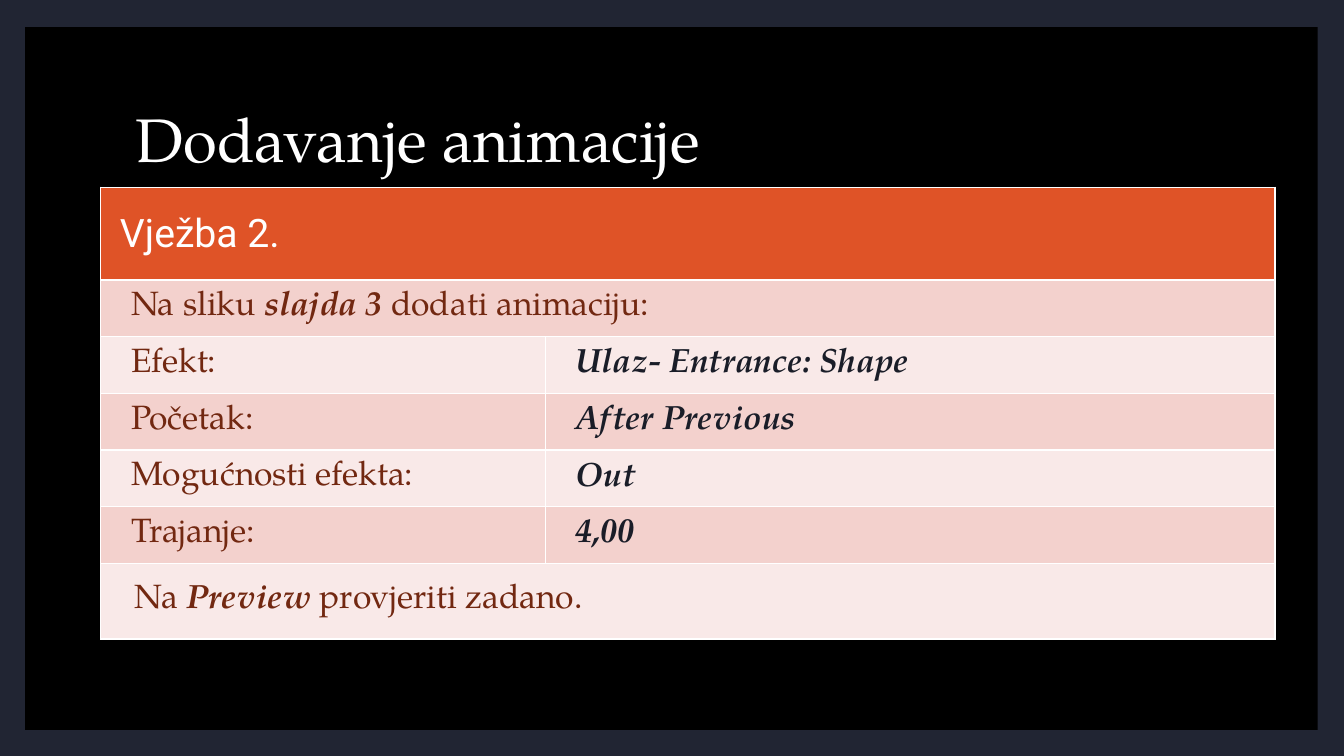
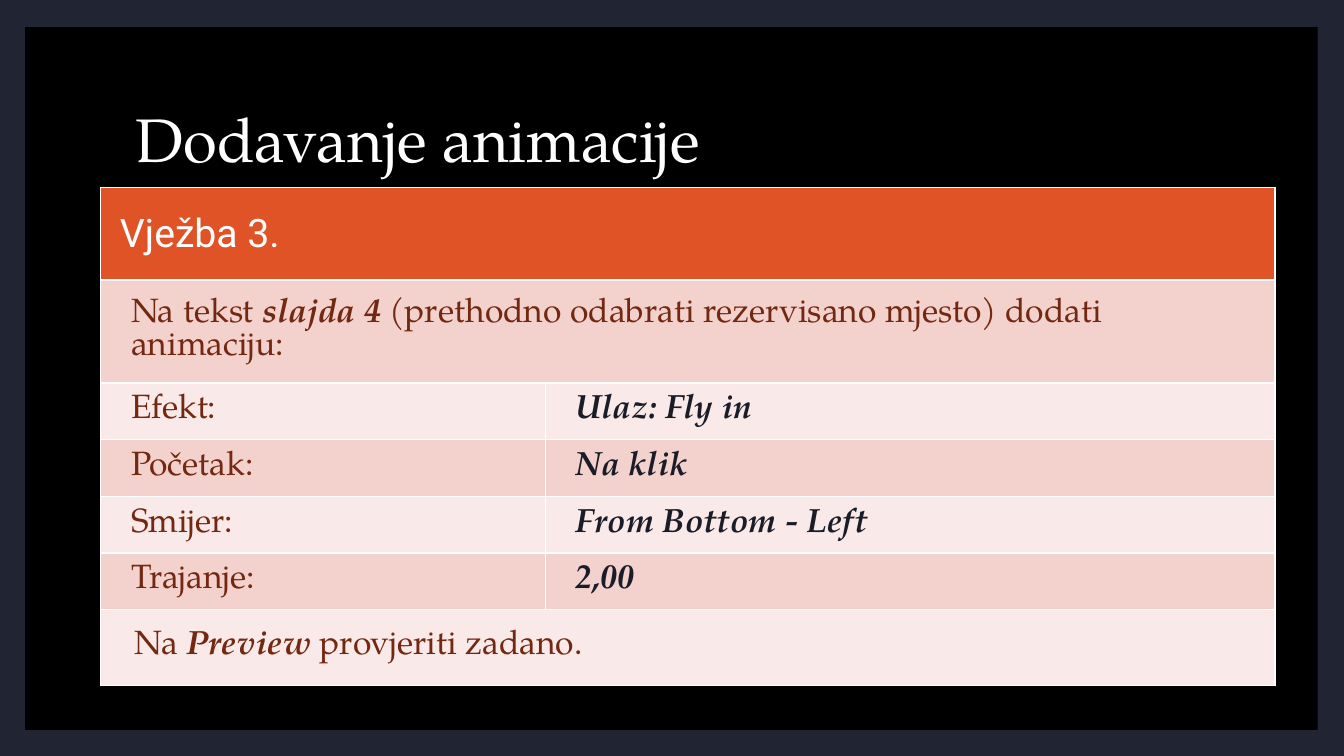
from lxml import etree
from pptx import Presentation
from pptx.dml.color import RGBColor
from pptx.enum.shapes import MSO_SHAPE
from pptx.enum.text import MSO_ANCHOR, PP_ALIGN
from pptx.oxml.ns import qn
from pptx.util import Pt

RECTANGLE = MSO_SHAPE.RECTANGLE
MIDDLE = MSO_ANCHOR.MIDDLE
LEFT, JUSTIFY = PP_ALIGN.LEFT, PP_ALIGN.JUSTIFY

COLORS = {
    "border": "212533", "panel": "000000", "white": "FFFFFF",
    "header": "DF5327", "odd": "F3D1CD", "even": "F9E9E8",
    "label": "722811", "value": "1A1D28",
}
SERIF, SANS = "TeX Gyre Pagella", "Roboto"
TITLE = "Dodavanje animacije"
CLOSING = "Na *Preview* provjeriti zadano."

# Heights of the header, setting and closing rows
HEADER_HEIGHT, ROW_HEIGHT, CLOSING_HEIGHT = 66.25, 40.5, 54
COLUMN_WIDTHS = (317.5, 521.3)

EXERCISES = [
    {
        "heading": "Vježba 2.",
        "task": "Na sliku *slajda 3 *dodati animaciju:",
        "task_height": ROW_HEIGHT,
        "settings": [
            ("Efekt:", "Ulaz- Entrance: Shape"),
            ("Početak:", "After Previous"),
            ("Mogućnosti efekta:", "Out"),
            ("Trajanje:", "4,00"),
        ],
    },
    {
        "heading": "Vježba 3.",
        "task": "Na tekst *slajda 4 *(prethodno odabrati rezervisano mjesto) "
                "dodati animaciju:",
        "task_height": 73.5,
        "settings": [
            ("Efekt:", "Ulaz: Fly in"),
            ("Početak:", "Na klik"),
            ("Smijer:", "From Bottom - Left"),
            ("Trajanje:", "2,00"),
        ],
    },
]


def write(text_frame, text, size=24, font=SERIF, color="label", align=LEFT,
          margin=0, indent=0, line_spacing=1.0):
    """Fill the frame; text between asterisks is bold italic."""
    text_frame.word_wrap = True
    text_frame.vertical_anchor = MIDDLE
    paragraph = text_frame.paragraphs[0]
    paragraph.alignment = align
    paragraph.line_spacing = line_spacing
    properties = paragraph._p.get_or_add_pPr()
    properties.set("marL", str(Pt(margin)))
    properties.set("indent", str(Pt(indent)))
    for position, part in enumerate(text.split("*")):
        if part:
            run = paragraph.add_run()
            run.text = part
            run.font.size = Pt(size)
            run.font.name = font
            run.font.bold = run.font.italic = position % 2 == 1
            run.font.color.rgb = RGBColor.from_string(COLORS[color])


def style_cell(cell, fill, side=7.2, vertical=0):
    """Set the margins, the white borders and the fill of a cell."""
    cell.margin_left, cell.margin_right = Pt(side), Pt(18.7)
    cell.margin_top = cell.margin_bottom = Pt(vertical)
    cell.vertical_anchor = MIDDLE
    properties = cell._tc.get_or_add_tcPr()
    for edge in ("a:lnL", "a:lnR", "a:lnT", "a:lnB"):
        line = etree.SubElement(properties, qn(edge), w=str(Pt(1)))
        solid = etree.SubElement(line, qn("a:solidFill"))
        etree.SubElement(solid, qn("a:srgbClr"), val=COLORS["white"])
    cell.fill.solid()
    cell.fill.fore_color.rgb = RGBColor.from_string(COLORS[fill])


presentation = Presentation()
presentation.slide_width, presentation.slide_height = Pt(960), Pt(540)
blank_layout = presentation.slide_layouts[6]

# Shared background
background = presentation.slide_master.background.fill
background.solid()
background.fore_color.rgb = RGBColor.from_string(COLORS["border"])

for exercise in EXERCISES:
    slide = presentation.slides.add_slide(blank_layout)

    # Black panel
    panel = slide.shapes.add_shape(RECTANGLE, Pt(18), Pt(19.3), Pt(923.3), Pt(502))
    panel.shadow.inherit = False
    panel.fill.solid()
    panel.fill.fore_color.rgb = RGBColor.from_string(COLORS["panel"])
    panel.line.fill.background()

    # Title
    title = slide.shapes.add_textbox(Pt(90), Pt(48.3), Pt(777.6), Pt(106.5))
    write(title.text_frame, TITLE, size=44, color="white", line_spacing=0.9)

    # Exercise table
    rows = [(exercise["heading"],), (exercise["task"],),
            *exercise["settings"], (CLOSING,)]
    heights = [HEADER_HEIGHT, exercise["task_height"],
               *[ROW_HEIGHT] * len(exercise["settings"]), CLOSING_HEIGHT]
    table = slide.shapes.add_table(
        len(rows), len(COLUMN_WIDTHS), Pt(72), Pt(133.8),
        Pt(sum(COLUMN_WIDTHS)), Pt(sum(heights))).table
    table.first_row = table.horz_banding = False
    for column, width in zip(table.columns, COLUMN_WIDTHS):
        column.width = Pt(width)

    for index, (texts, height) in enumerate(zip(rows, heights)):
        table.rows[index].height = Pt(height)
        cells = [table.cell(index, column) for column in range(len(COLUMN_WIDTHS))]
        fill = "header" if index == 0 else ("even", "odd")[index % 2]
        margins = {"side": 9.4, "vertical": 3.6} if texts[0] == CLOSING else {}
        for cell in cells:
            style_cell(cell, fill, **margins)
        if len(texts) == 1:
            cells[0].merge(cells[-1])

        if index == 0:
            write(cells[0].text_frame, texts[0], size=28, font=SANS, color="white",
                  align=JUSTIFY, margin=36, indent=-29.5)
        else:
            write(cells[0].text_frame, texts[0], margin=14.4)
        if len(texts) == 2:
            write(cells[1].text_frame, f"*{texts[1]}*", color="value", margin=14.4)

presentation.save("out.pptx")
